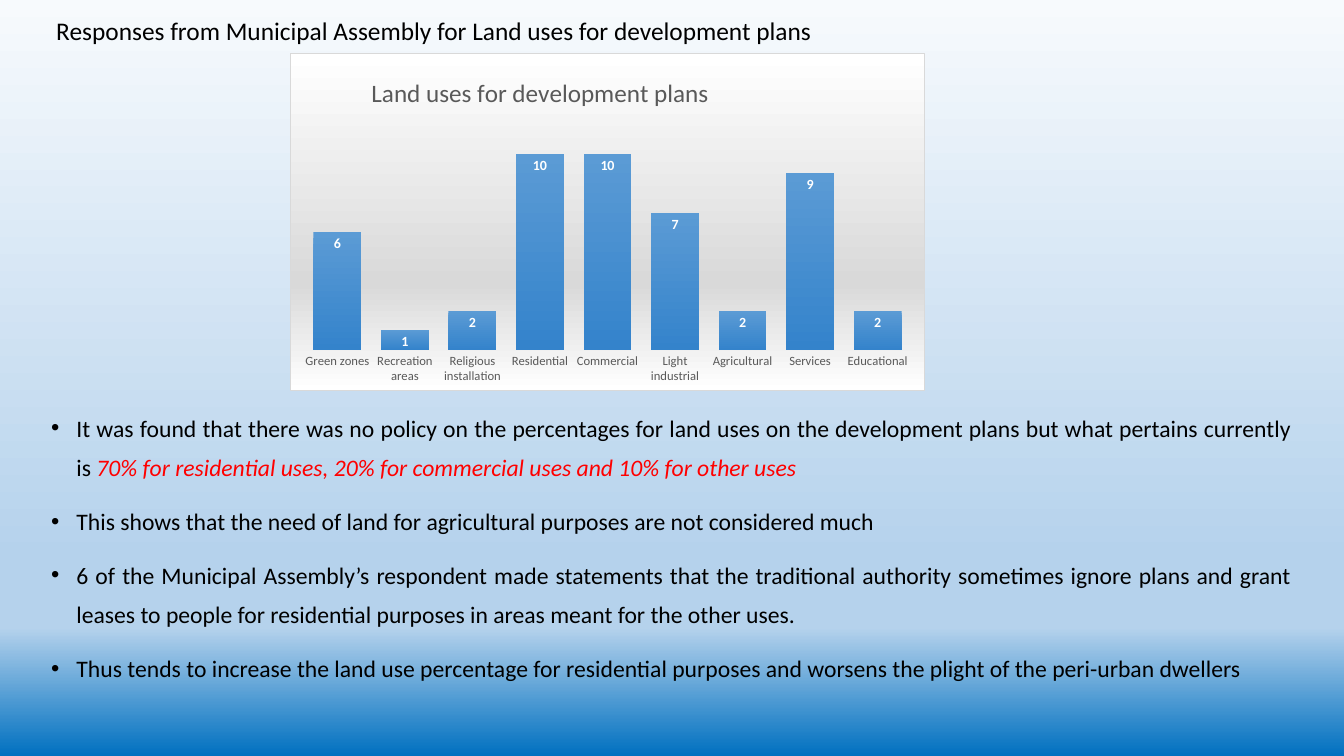
from lxml.etree import SubElement
from pptx import Presentation
from pptx.chart.data import CategoryChartData
from pptx.dml.color import RGBColor
from pptx.enum.chart import XL_CHART_TYPE, XL_LABEL_POSITION, XL_TICK_LABEL_POSITION, XL_TICK_MARK
from pptx.enum.text import MSO_ANCHOR, PP_ALIGN
from pptx.oxml import parse_xml
from pptx.oxml.ns import nsdecls, qn
from pptx.util import Inches, Pt

BLACK = RGBColor(0x00, 0x00, 0x00)
WHITE = RGBColor(0xFF, 0xFF, 0xFF)
RED = RGBColor(0xFF, 0x00, 0x00)
GREY = RGBColor(0x59, 0x59, 0x59)
SILVER = RGBColor(0xD9, 0xD9, 0xD9)
MIST = RGBColor(0xF7, 0xFA, 0xFD)
SKY = RGBColor(0xB5, 0xD2, 0xEC)
OCEAN = RGBColor(0x00, 0x70, 0xC0)
BAR_TOP = RGBColor(0x5B, 0x9B, 0xD5)
BAR_BOTTOM = RGBColor(0x34, 0x83, 0xCB)

HEADING = "Responses from Municipal Assembly for Land uses for development plans"
CHART_TITLE = "Land uses for development plans"
LAND_USES = {
    "Green zones": 6,
    "Recreation areas": 1,
    "Religious installation": 2,
    "Residential": 10,
    "Commercial": 10,
    "Light industrial": 7,
    "Agricultural": 2,
    "Services": 9,
    "Educational": 2,
}
FINDINGS = [
    [
        ("It was found that there was no policy on the percentages for land uses on the "
         "development plans but what pertains currently is ", {}),
        ("70% for residential uses, 20% for commercial uses and 10% for other uses",
         {"color": RED, "italic": True}),
    ],
    [("This shows that the need of land for agricultural purposes are not considered much", {})],
    [("6 of the Municipal Assembly’s respondent made statements that the traditional authority "
      "sometimes ignore plans and grant leases to people for residential purposes in areas "
      "meant for the other uses.", {})],
    [("Thus tends to increase the land use percentage for residential purposes and worsens "
      "the plight of the peri-urban dwellers", {})],
]


def style_font(font, size, color=BLACK, bold=False, italic=False):
    font.name = "Calibri"
    font.size = Pt(size)
    font.color.rgb = color
    font.bold = bold
    font.italic = italic


def add_text(paragraph, text, **style):
    run = paragraph.add_run()
    run.text = text
    style_font(run.font, **style)


def vertical_gradient(properties, stops):
    stop_xml = "".join(
        f'<a:gs pos="{percent * 1000}"><a:srgbClr val="{color}"/></a:gs>'
        for percent, color in stops
    )
    gradient = parse_xml(
        f'<a:gradFill {nsdecls("a")} rotWithShape="1"><a:gsLst>{stop_xml}</a:gsLst>'
        '<a:lin ang="5400000" scaled="0"/></a:gradFill>'
    )
    properties.replace(properties.find(qn("a:solidFill")), gradient)


def place(element, index, **fractions):
    for old in element.findall(qn("c:layout")):
        element.remove(old)
    layout = parse_xml(f'<c:layout {nsdecls("c")}/>')
    manual = SubElement(layout, qn("c:manualLayout"))
    if "w" in fractions:
        SubElement(manual, qn("c:layoutTarget")).set("val", "inner")
    for edge in "xy":
        SubElement(manual, qn(f"c:{edge}Mode")).set("val", "edge")
    for name, fraction in fractions.items():
        SubElement(manual, qn(f"c:{name}")).set("val", str(fraction))
    element.insert(index, layout)


class LandUseSlide:
    def __init__(self, presentation, text_size):
        self.slide = presentation.slides.add_slide(presentation.slide_layouts[6])
        self.text_size = text_size

    def background(self, stops):
        self.slide.background.fill.solid()
        vertical_gradient(self.slide.element.find(f".//{qn('p:bgPr')}"), stops)

    def text_frame(self, left, top, width, height, anchor=MSO_ANCHOR.TOP):
        box = self.slide.shapes.add_textbox(
            Inches(left), Inches(top), Inches(width), Inches(height))
        frame = box.text_frame
        frame.word_wrap = True
        frame.vertical_anchor = anchor
        return frame

    def heading(self, text, *area):
        frame = self.text_frame(*area, anchor=MSO_ANCHOR.MIDDLE)
        add_text(frame.paragraphs[0], text, size=18.1)

    def bullets(self, items, *area):
        frame = self.text_frame(*area)
        for number, parts in enumerate(items):
            paragraph = frame.add_paragraph() if number else frame.paragraphs[0]
            paragraph.alignment = PP_ALIGN.JUSTIFY
            paragraph.line_spacing = 1.4
            paragraph.space_after = Pt(10)
            properties = paragraph._p.get_or_add_pPr()
            properties.set("marL", str(Inches(0.25)))
            properties.set("indent", str(-Inches(0.25)))
            SubElement(properties, qn("a:buFont")).set("typeface", "Arial")
            SubElement(properties, qn("a:buChar")).set("char", "•")
            for text, style in parts:
                add_text(paragraph, text, size=self.text_size, **style)

    def column_chart(self, title, values, left, top, width, height):
        chart_data = CategoryChartData()
        chart_data.categories = list(values)
        chart_data.add_series("Series 1", list(values.values()))
        chart = self.slide.shapes.add_chart(
            XL_CHART_TYPE.COLUMN_CLUSTERED, Inches(left), Inches(top),
            Inches(width), Inches(height), chart_data).chart
        style_font(chart.font, 10)
        chart.has_legend = False
        chart.has_title = True
        add_text(chart.chart_title.text_frame.paragraphs[0], title, size=18, color=GREY)
        chart.chart_title.include_in_layout = False
        place(chart.chart_title._element, 1, x=0.12, y=0.05)
        place(chart._chartSpace.chart.plotArea, 0, x=0.02, y=0.18, w=0.96, h=0.7)
        self.chart_frame(chart)
        self.axes(chart)
        self.columns(chart.plots[0])

    def chart_frame(self, chart):
        frame = parse_xml(
            f'<c:spPr {nsdecls("c", "a")}><a:solidFill/><a:ln w="{Pt(0.75)}"><a:solidFill>'
            f'<a:srgbClr val="{SILVER}"/></a:solidFill></a:ln></c:spPr>')
        vertical_gradient(frame, [(0, WHITE), (68, SILVER), (100, WHITE)])
        chart._chartSpace.find(qn("c:txPr")).addprevious(frame)

    def axes(self, chart):
        land_use_axis = chart.category_axis
        land_use_axis.major_tick_mark = XL_TICK_MARK.NONE
        land_use_axis.format.line.fill.background()
        style_font(land_use_axis.tick_labels.font, 9, GREY)
        count_axis = chart.value_axis
        count_axis.minimum_scale = 0
        count_axis.maximum_scale = 12
        count_axis.has_major_gridlines = False
        count_axis.tick_label_position = XL_TICK_LABEL_POSITION.NONE
        count_axis.visible = False

    def columns(self, plot):
        plot.gap_width = 41
        plot.vary_by_categories = False
        responses = plot.series[0]
        responses.format.fill.solid()
        vertical_gradient(
            responses._element.find(qn("c:spPr")), [(0, BAR_TOP), (100, BAR_BOTTOM)])
        labels = responses.data_labels
        labels.show_value = True
        labels.position = XL_LABEL_POSITION.INSIDE_END
        style_font(labels.font, 10, WHITE, bold=True)


def main():
    presentation = Presentation()
    presentation.slide_width = Inches(13.33)
    presentation.slide_height = Inches(7.5)
    page = LandUseSlide(presentation, text_size=16.9)
    page.background([(0, MIST), (74, SKY), (83, SKY), (100, OCEAN)])
    page.heading(HEADING, 0.46, 0.1, 12.4, 0.4)
    page.column_chart(CHART_TITLE, LAND_USES, 2.88, 0.53, 6.29, 3.35)
    page.bullets(FINDINGS, 0.41, 3.94, 12.51, 3.4)
    presentation.save("out.pptx")


if __name__ == "__main__":
    main()
